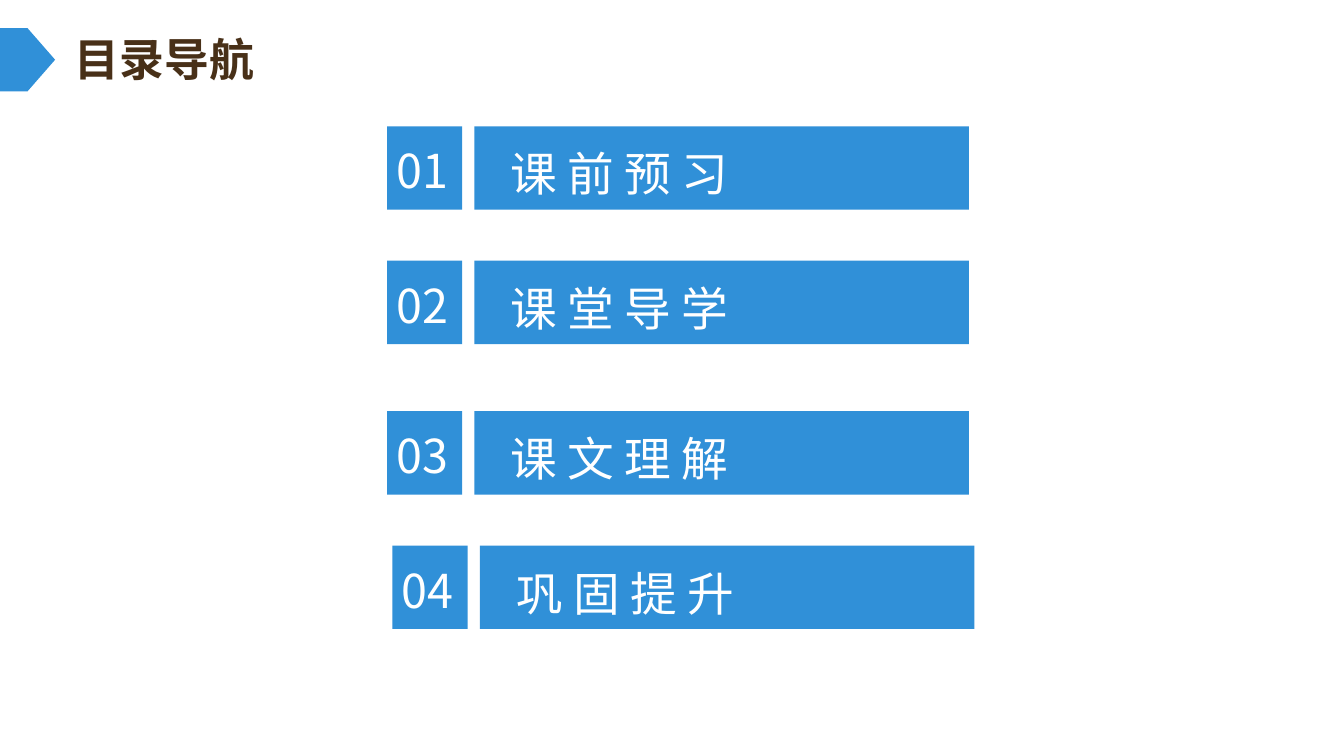
from lxml import etree
from pptx import Presentation
from pptx.dml.color import RGBColor
from pptx.enum import shapes, text
from pptx.oxml import ns
from pptx.util import Inches, Pt

FONT = "Noto Sans CJK SC"
BLUE, BROWN, WHITE = "3090D8", "483018", "FFFFFF"


def add_block(parent, kind, left, top, width, height):
    shape = parent.shapes.add_shape(
        kind, Inches(left), Inches(top), Inches(width), Inches(height))
    shape.shadow.inherit = False
    shape.fill.solid()
    shape.fill.fore_color.rgb = RGBColor.from_string(BLUE)
    shape.line.fill.background()
    return shape


def add_label(parent, content, left, top, width, height, *, size=25,
              color=WHITE, bold=False, wrap=False, margins=(0.1, 0.05)):
    """Add a one-line text box; margins are horizontal and vertical."""
    box = parent.shapes.add_textbox(
        Inches(left), Inches(top), Inches(width), Inches(height))
    frame = box.text_frame
    frame.word_wrap = wrap
    frame.auto_size = text.MSO_AUTO_SIZE.SHAPE_TO_FIT_TEXT
    frame.margin_left = frame.margin_right = Inches(margins[0])
    frame.margin_top = frame.margin_bottom = Inches(margins[1])
    run = frame.paragraphs[0].add_run()
    run.text = content
    run.font.size = Pt(size)
    run.font.bold = bold
    run.font.color.rgb = RGBColor.from_string(color)
    run.font.name = FONT
    # Chinese characters take their font from a:ea
    east_asian = etree.SubElement(run._r.get_or_add_rPr(), ns.qn("a:ea"))
    east_asian.set("typeface", FONT)


presentation = Presentation()
presentation.slide_width = Inches(10)
presentation.slide_height = Inches(10) * 9 // 16
slide = presentation.slides.add_slide(presentation.slide_layouts[6])

# Heading
add_block(slide, shapes.MSO_SHAPE.PENTAGON, 0, 0.21, 0.41, 0.47)
add_label(slide, "目录导航", 0.46, 0.19, 1.64, 0.5,
          size=24, color=BROWN, bold=True, wrap=True)

# Contents: title, left and top of each entry
entries = [
    ("课 前 预 习", 2.88, 0.94),
    ("课 堂 导 学", 2.88, 1.94),
    ("课 文 理 解", 2.88, 3.06),
    ("巩 固 提 升", 2.92, 4.06),
]
for number, (title, left, top) in enumerate(entries, start=1):
    add_block(slide, shapes.MSO_SHAPE.RECTANGLE, left, top, 0.56, 0.62)
    add_label(slide, f"{number:02d}", left - 0.03, top + 0.07, 0.62, 0.53)
    bar = slide.shapes.add_group_shape()
    add_block(bar, shapes.MSO_SHAPE.RECTANGLE, left + 0.65, top, 3.68, 0.62)
    add_label(bar, title, left + 0.79, top + 0.07, 1.98, 0.56,
              margins=(0.13, 0.07))

presentation.save("out.pptx")
